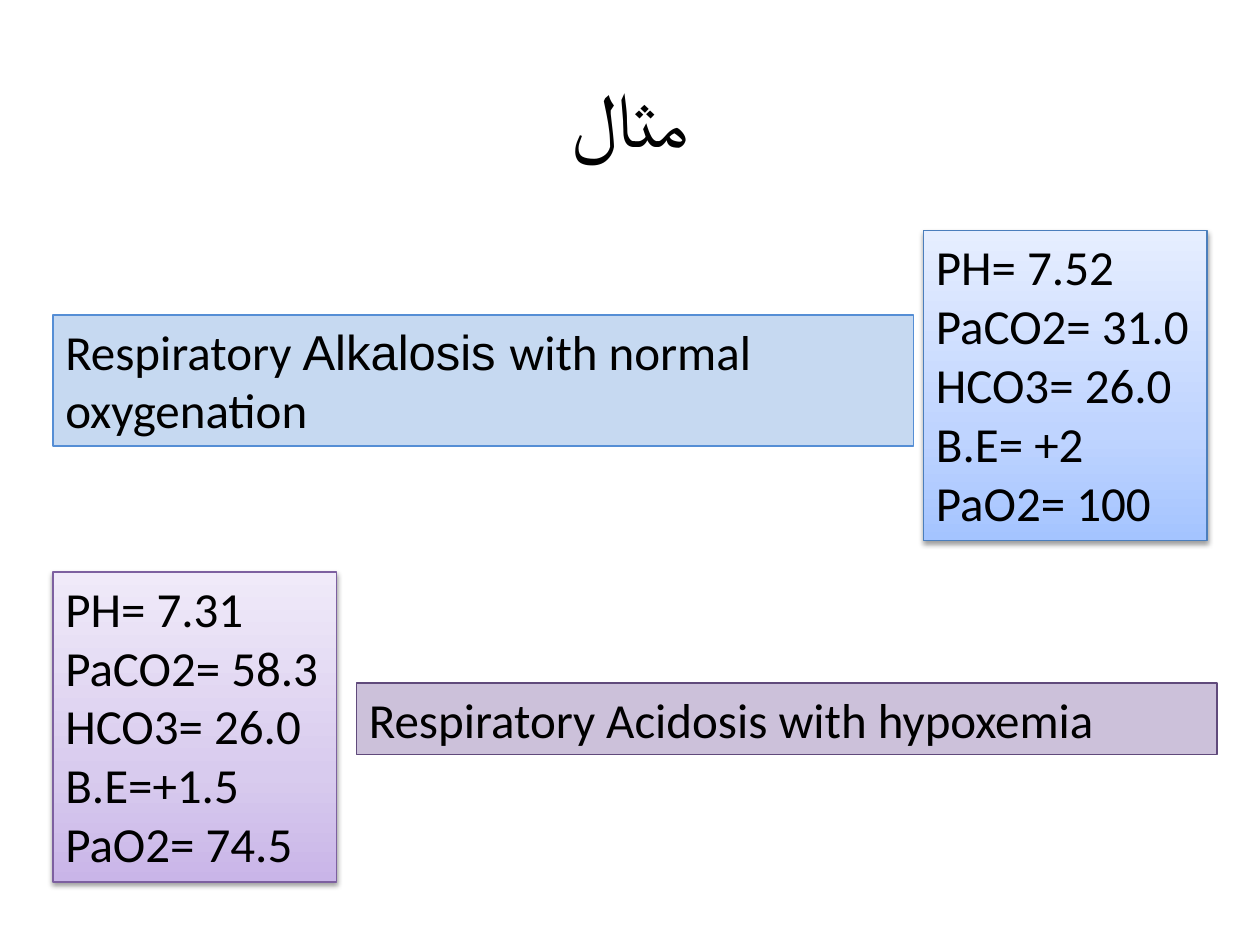
import copy

import pptx
import pptx.dml.color
import pptx.enum.shapes
import pptx.enum.text
import pptx.oxml
import pptx.oxml.ns
import pptx.util

Inches = pptx.util.Inches
Pt = pptx.util.Pt
RGB = pptx.dml.color.RGBColor.from_string

COLORS = {
    "text": "000000",
    "blue_fill": "C6D9F1",
    "blue_line": "558ED5",
    "blue_card_line": "4B7EBC",
    "purple_fill": "CCC1DA",
    "purple_line": "604A7B",
    "purple_card_line": "7D60A0",
}
# Gradient colours run from the bottom of a card to its top
GRADIENTS = {
    "blue": ["A4C4FF", "BFD4FF", "E6EEFF"],
    "purple": ["C9B5E8", "D8CBEE", "F0EAF9"],
}
STOPS = [0, 0.35, 1]
SHADOW = (
    f'<a:outerShdw {pptx.oxml.ns.nsdecls("a")} blurRad="{Pt(3.1)}" dist="{Pt(1.6)}" '
    'dir="5400000" rotWithShape="0"><a:srgbClr val="000000">'
    '<a:alpha val="38000"/></a:srgbClr></a:outerShdw>'
)


def add_box(left, top, width, height, line, paragraphs):
    """Add an outlined rectangle; each paragraph is a list of (text, font) runs."""
    sp = s.shapes.add_shape(
        pptx.enum.shapes.MSO_SHAPE.RECTANGLE,
        Inches(left), Inches(top), Inches(width), Inches(height))
    sp.shadow.inherit = False
    sp.line.color.rgb = RGB(COLORS[line])
    sp.line.width = Pt(0.75)
    tf = sp.text_frame
    tf.word_wrap = True
    tf.vertical_anchor = pptx.enum.text.MSO_ANCHOR.TOP
    for i, runs in enumerate(paragraphs):
        p = tf.add_paragraph() if i else tf.paragraphs[0]
        p.alignment = pptx.enum.text.PP_ALIGN.LEFT
        for text, font in runs:
            r = p.add_run()
            r.text = text
            r.font.name = font
            r.font.size = Pt(28)
            r.font.color.rgb = RGB(COLORS["text"])
    return sp


prs = pptx.Presentation()
prs.slide_width = Inches(10)
prs.slide_height = Inches(7.5)
s = prs.slides.add_slide(prs.slide_layouts[6])

# Title
title = s.shapes.add_textbox(Inches(0.5), Inches(0.3), Inches(9), Inches(1.25))
tf = title.text_frame
tf.word_wrap = True
tf.vertical_anchor = pptx.enum.text.MSO_ANCHOR.MIDDLE
tf.text = "مثال"
p = tf.paragraphs[0]
p.alignment = pptx.enum.text.PP_ALIGN.CENTER
r = p.runs[0]
r.font.name = "Calibri"
r.font.size = Pt(44)
r.font.color.rgb = RGB(COLORS["text"])

# Blood gas readings
cards = [
    (0.42, 4.54, "purple",
     ["PH= 7.31", "PaCO2= 58.3", "HCO3= 26.0", "B.E=+1.5", "PaO2= 74.5"]),
    (7.33, 1.83, "blue",
     ["PH= 7.52", "PaCO2= 31.0", "HCO3= 26.0", "B.E= +2", "PaO2= 100"]),
]
for left, top, hue, readings in cards:
    sp = add_box(left, top, 2.25, 2.46, f"{hue}_card_line",
                 [[(reading, "Calibri")] for reading in readings])
    sp.fill.gradient()
    sp.fill.gradient_angle = 90
    first_stop = sp._element.spPr.xpath("a:gradFill/a:gsLst/a:gs")[0]
    first_stop.addnext(copy.deepcopy(first_stop))
    for stop, position, color in zip(sp.fill.gradient_stops, STOPS, GRADIENTS[hue]):
        stop.position = position
        stop.color.rgb = RGB(color)
    effects = sp._element.spPr.find(pptx.oxml.ns.qn("a:effectLst"))
    effects.append(pptx.oxml.parse_xml(SHADOW))

# Diagnoses
diagnoses = [
    (2.83, 5.42, 0.57, "purple", [("Respiratory Acidosis with hypoxemia", "Calibri")]),
    (0.42, 2.5, 1.04, "blue",
     [("Respiratory ", "Calibri"), ("Alkalosis ", "Arial"),
      ("with normal oxygenation", "Calibri")]),
]
for left, top, height, hue, runs in diagnoses:
    sp = add_box(left, top, 6.83, height, f"{hue}_line", [runs])
    sp.fill.solid()
    sp.fill.fore_color.rgb = RGB(COLORS[f"{hue}_fill"])

prs.save("out.pptx")
